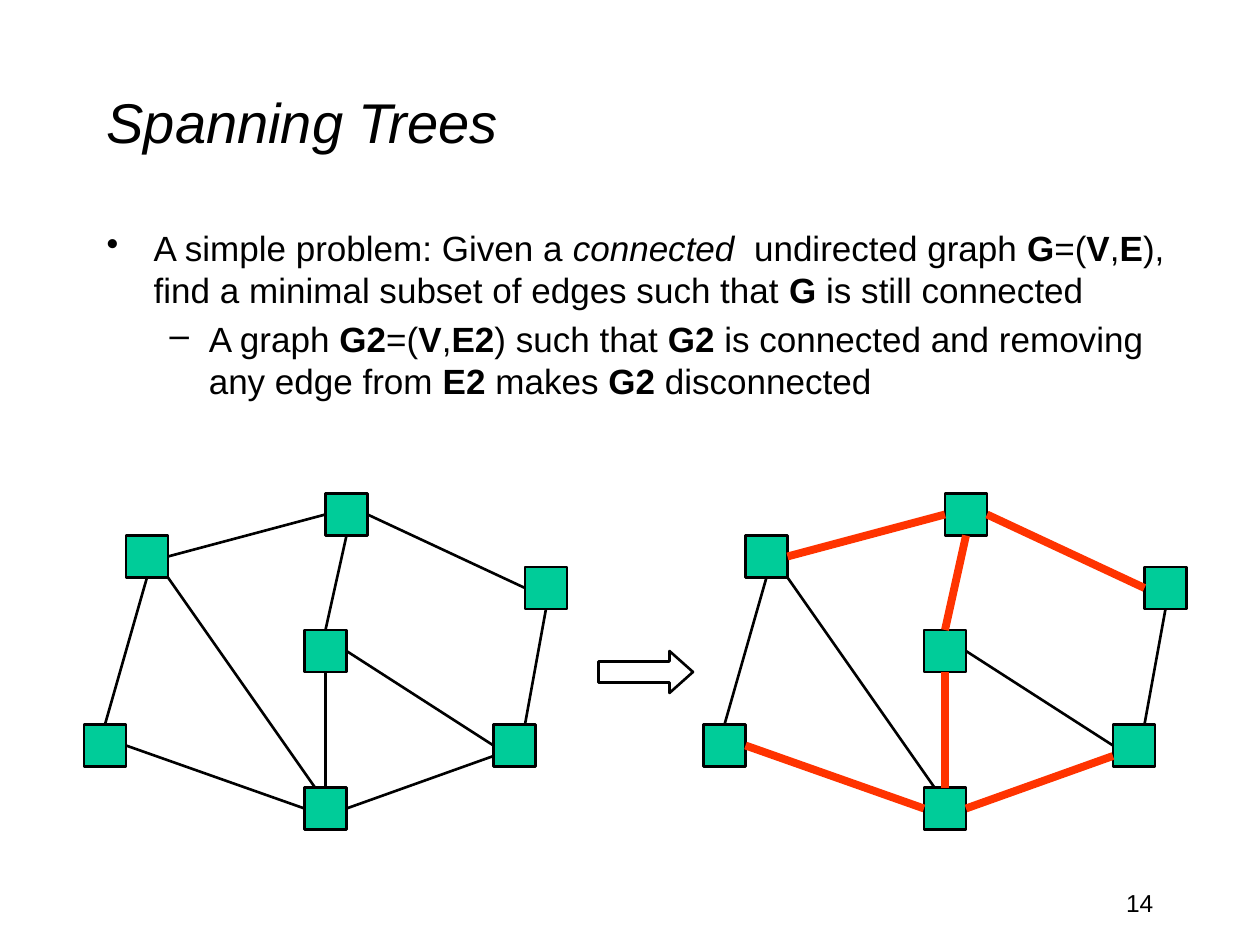
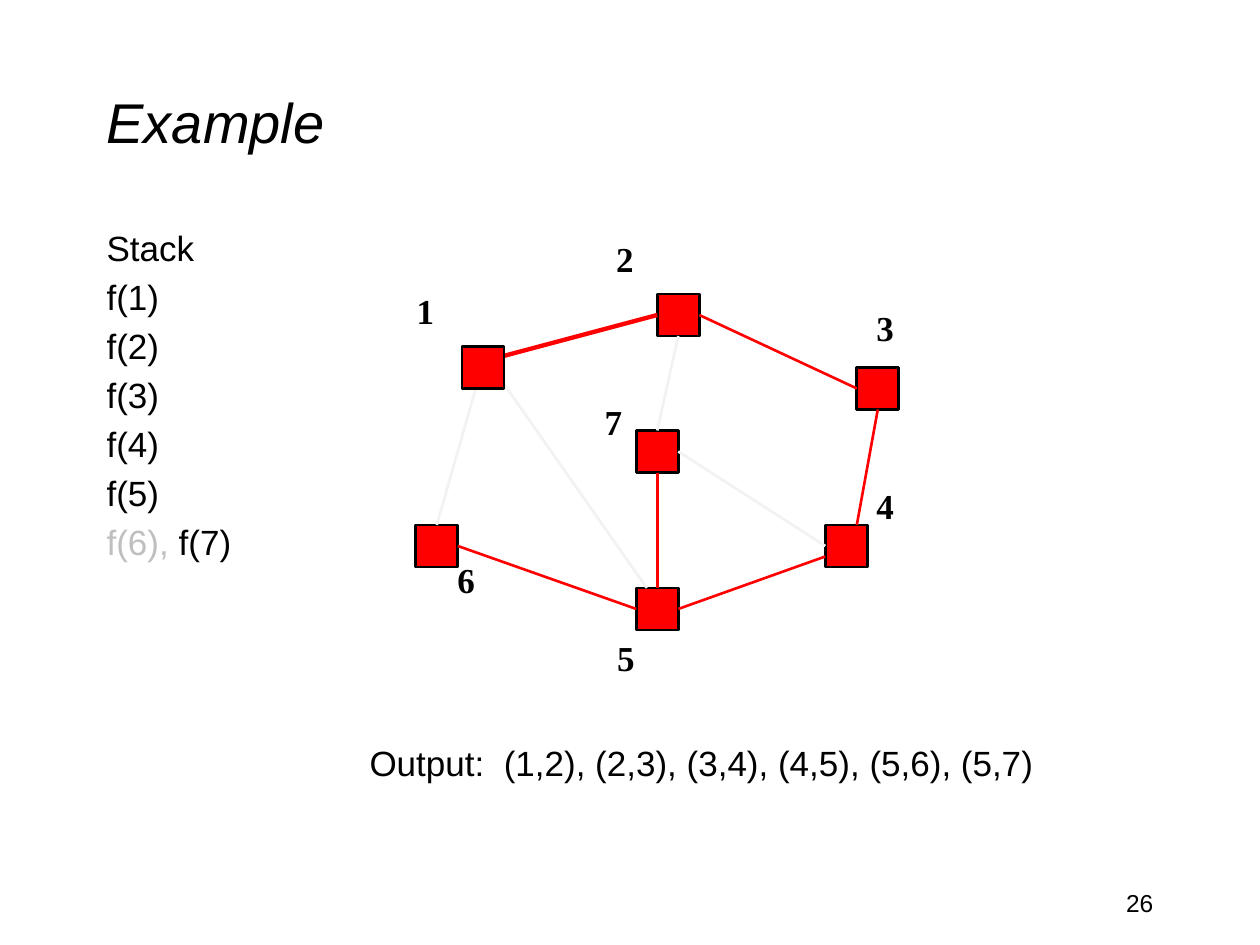
from pptx import Presentation
from pptx.dml.color import RGBColor as RGB
from pptx.enum.shapes import MSO_CONNECTOR as Conn, MSO_SHAPE as Kind
from pptx.enum.text import MSO_ANCHOR as Anchor, PP_ALIGN as Align
from pptx.oxml.ns import qn
from pptx.util import Cm, Pt
from lxml.etree import SubElement as Sub

BLACK = RGB(0, 0, 0)
WHITE = RGB(255, 255, 255)
GREEN = RGB(0, 204, 153)
ORANGE = RGB(255, 51, 0)
RED = RGB(255, 0, 0)
PALE = RGB(242, 242, 242)
GREY = RGB(191, 191, 191)

# The graph lies on a grid of twelfths of an inch
UNIT = Cm(2.54) / 12
SIDE = 4
NODES = {1: (12, 51), 2: (31, 47), 3: (50, 54), 4: (47, 69),
         5: (29, 75), 6: (8, 69), 7: (29, 60)}
EDGES = {(1, 2): (16, 53, 31, 49), (2, 7): (33, 51, 31, 60),
         (2, 3): (35, 49, 50, 56), (4, 7): (33, 62, 47, 71),
         (3, 4): (52, 58, 50, 69), (5, 7): (31, 64, 31, 75),
         (4, 5): (33, 77, 47, 72), (5, 6): (12, 71, 29, 77),
         (1, 6): (14, 55, 10, 69), (1, 5): (16, 55, 30, 75)}
TREE = [(1, 2), (2, 3), (4, 5), (5, 6), (5, 7)]


def write(slide, box, lines, size=20, face="Arial", bold=False, slant=False,
          align=Align.LEFT, anchor=Anchor.TOP, wrap=True, marks=()):
    """Write lines; "|" parts the runs, and b:, i: or g: marks a run's style."""
    frame = slide.shapes.add_textbox(*[Cm(n) for n in box]).text_frame
    frame.word_wrap = wrap
    frame.vertical_anchor = anchor
    for i, line in enumerate(lines):
        para = frame.paragraphs[0] if i == 0 else frame.add_paragraph()
        if marks:
            mark, left, hang = marks[i]
            props = para._p.get_or_add_pPr()
            props.set("marL", str(Cm(left)))
            props.set("indent", str(-Cm(hang)))
            Sub(props, qn("a:buChar")).set("char", mark)
        para.alignment = align
        if i:
            para.space_before = Pt(size * 0.2)
        font = para.font
        font.size, font.name = Pt(size), face
        font.bold, font.italic = bold, slant
        font.color.rgb = BLACK
        for part in line.split("|"):
            style = part[0] if part[1:2] == ":" else ""
            run = para.add_run()
            run.text = part[2:] if style else part
            if style == "b":
                run.font.bold = True
            elif style == "i":
                run.font.italic = True
            elif style == "g":
                run.font.color.rgb = GREY


def draw(slide, kind, x, y, wide, high, fill):
    """Draw an outlined shape, measured in grid units."""
    shape = slide.shapes.add_shape(
        kind, *[round(n * UNIT) for n in (x, y, wide, high)])
    shape.shadow.inherit = False
    shape.fill.solid()
    shape.fill.fore_color.rgb = fill
    shape.line.color.rgb = BLACK
    shape.line.width = Pt(1.5)
    return shape


deck = Presentation()
deck.slide_width, deck.slide_height = Cm(25.4), Cm(19.05)

# Titles and page numbers
pages = []
for title, number in (("Spanning Trees", "14"), ("Example", "26")):
    page = deck.slides.add_slide(deck.slide_layouts[6])
    write(page, (1.9, 0.85, 21.6, 3.18), [title], 32, slant=True,
          anchor=Anchor.MIDDLE)
    write(page, (18.2, 17.78, 5.3, 1.27), [number], 14, align=Align.RIGHT)
    pages.append(page)
span, demo = pages

# The problem
write(span, (1.9, 4.45, 22.02, 5.08), [
    "A simple problem: Given a |i:connected|  undirected graph |b:G|=(|b:V|,"
    "|b:E|), find a minimal subset of edges such that |b:G| is still connected",
    "A graph |b:G2|=(|b:V|,|b:E2|) such that |b:G2| is connected and removing "
    "any edge from |b:E2| makes |b:G2| disconnected",
], marks=[("•", 0.95, 0.95), ("–", 2.06, 0.79)])

# Stack and output
write(demo, (1.9, 4.45, 3.18, 12.5),
      ["Stack", *[f"f({n})" for n in range(1, 6)], "g:f(6), |f(7)"])
write(demo, (7.2, 14.82, 13.97, 1.48),
      ["Output:  (1,2), (2,3), (3,4), (4,5), (5,6), (5,7)"])

# Three graphs: slide, shift, node fill, tree edges, their look, other edges
PLAIN = (BLACK, 1.5)
graphs = [
    (span, 0, 0, GREEN, [], PLAIN, PLAIN),
    (span, 59, 0, GREEN, TREE + [(2, 7)], (ORANGE, 4.5), PLAIN),
    (demo, 31.6, -19, RED, TREE + [(3, 4)], (RED, 1.5), (PALE, 1.5)),
]
for page, dx, dy, fill, tree, strong, weak in graphs:
    for node, (x, y) in NODES.items():
        if page is span or node != 1:
            draw(page, Kind.RECTANGLE, x + dx, y + dy, SIDE, SIDE, fill)
    for edge, (x1, y1, x2, y2) in EDGES.items():
        ends = (x1 + dx, y1 + dy, x2 + dx, y2 + dy)
        line = page.shapes.add_connector(
            Conn.STRAIGHT, *[round(n * UNIT) for n in ends])
        color, width = strong if edge in tree else weak
        if page is demo and edge == (1, 2):
            width = 2.5
        line.line.color.rgb = color
        line.line.width = Pt(width)
        Sub(line._element.spPr, qn("a:effectLst"))

# The start node covers the ends of its edges
draw(demo, Kind.RECTANGLE, 44, 33, SIDE, SIDE, RED)

# Arrow between the graphs
arrow = draw(span, Kind.RIGHT_ARROW, 57, 62, 9, SIDE, WHITE)
arrow.adjustments[1] = 0.56

# Node numbers
spots = [(8.15, 5.72), (12.17, 4.67), (17.42, 6.05), (17.42, 9.65),
         (12.19, 12.7), (8.97, 11.13), (11.94, 7.95)]
for n, (x, y) in enumerate(spots, 1):
    write(demo, (x, y, 0.86, 1.12), [str(n)], face="Times New Roman",
          bold=True, wrap=False)

deck.save("out.pptx")
